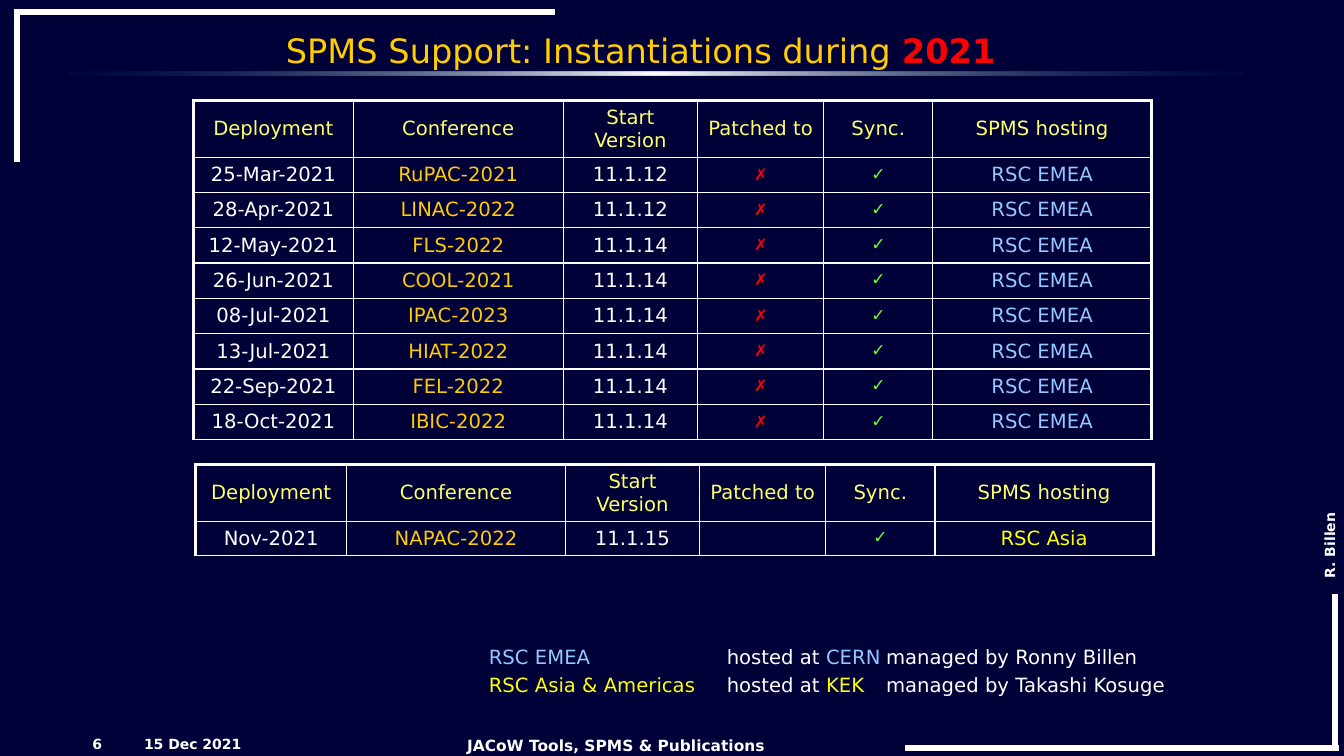
from lxml.etree import SubElement
from pptx import Presentation
from pptx.dml.color import RGBColor
from pptx.enum.shapes import MSO_CONNECTOR as Link, MSO_SHAPE as Shape
from pptx.enum.text import MSO_ANCHOR as Anchor, PP_ALIGN as Align
from pptx.oxml.ns import qn
from pptx.util import Inches, Pt

NAVY = RGBColor(0x00, 0x00, 0x39)
WHITE = RGBColor(0xFF, 0xFF, 0xFF)
GOLD = RGBColor(0xFF, 0xCC, 0x00)
LEMON = RGBColor(0xFF, 0xFF, 0x66)
YELLOW = RGBColor(0xFF, 0xFF, 0x00)
RED = RGBColor(0xFF, 0x00, 0x00)
GREEN = RGBColor(0x66, 0xFF, 0x33)
SKY = RGBColor(0x93, 0xC9, 0xFF)
STEEL = RGBColor(0x00, 0x33, 0x66)
SANS, MONO = "DejaVu Sans", "Courier New"

# Content
TITLE = [("SPMS Support: Instantiations during ", GOLD, False), ("2021", RED, True)]
HEAD = ("Deployment", "Conference", "Start Version", "Patched to", "Sync.", "SPMS hosting")
DONE = [
    ("25-Mar-2021", "RuPAC-2021", "11.1.12"),
    ("28-Apr-2021", "LINAC-2022", "11.1.12"),
    ("12-May-2021", "FLS-2022", "11.1.14"),
    ("26-Jun-2021", "COOL-2021", "11.1.14"),
    ("08-Jul-2021", "IPAC-2023", "11.1.14"),
    ("13-Jul-2021", "HIAT-2022", "11.1.14"),
    ("22-Sep-2021", "FEL-2022", "11.1.14"),
    ("18-Oct-2021", "IBIC-2022", "11.1.14"),
]
EMEA = [row + ("✗", "✓", "RSC EMEA") for row in DONE]
ASIA = [("Nov-2021", "NAPAC-2022", "11.1.15", "", "✓", "RSC Asia")]
HOSTS = [
    ("RSC EMEA", "CERN", "Ronny Billen", SKY),
    ("RSC Asia & Americas", "KEK", "Takashi Kosuge", YELLOW),
]

# Tables: left, top, column widths in twelfths of an inch, row height, rows, host colour
TABLES = [
    (1.92, 1, (19, 25, 16, 15, 13, 26), 0.35, EMEA, SKY),
    (1.94, 4.61, (18, 26, 16, 15, 13, 26), 0.34, ASIA, YELLOW),
]
TOP_ROW = 0.56
THIN, THICK = 1, 2.25

# Footer: text, box, size, alignment, rotation
NOTES = [
    ("R. Billen", (12.69, 5.2, 1, 0.27), 10, Align.LEFT, 270),
    ("15 Dec 2021", (1.33, 7.25, 1.78, 0.25), 10, Align.LEFT, 0),
    ("JACoW Tools, SPMS & Publications", (3.22, 7.25, 5.78, 0.25), 11, Align.CENTER, 0),
    ("6", (0.33, 7.25, 0.78, 0.25), 10, Align.RIGHT, 0),
]
# Corner frame lines: from x, y to x, y
FRAME = [
    (0.17, 0.09, 0.17, 1.61),
    (0.14, 0.12, 5.5, 0.12),
    (8.98, 7.42, 13.28, 7.42),
    (13.24, 5.89, 13.24, 7.41),
]


def inch(box):
    return [Inches(n) for n in box]


def add_run(para, text, size, color, bold=False, font=SANS):
    run = para.add_run()
    run.text = text
    run.font.name, run.font.size, run.font.bold = font, Pt(size), bold
    run.font.color.rgb = color


def add_box(slide, box):
    shape = slide.shapes.add_textbox(*inch(box))
    shape.text_frame.word_wrap = True
    return shape


def add_fill(parent, color, alpha=100):
    clr = SubElement(parent, qn("a:srgbClr"), val=str(color))
    if alpha < 100:
        SubElement(clr, qn("a:alpha"), val=str(alpha * 1000))


def add_rule(slide):
    bar = slide.shapes.add_shape(Shape.RECTANGLE, *inch((0.67, 0.71, 11.67, 0.04)))
    bar.shadow.inherit = False
    bar.line.fill.background()
    bar.fill.gradient()
    bar.fill.gradient_angle = 0
    stops = bar.fill._fill._gradFill.find(qn("a:gsLst"))
    for stop in list(stops):
        stops.remove(stop)
    for pos, color, alpha in ((0, STEEL, 10), (50, WHITE, 100), (100, STEEL, 10)):
        add_fill(SubElement(stops, qn("a:gs"), pos=str(pos * 1000)), color, alpha)


def add_frame(slide):
    for ends in FRAME:
        line = slide.shapes.add_connector(Link.STRAIGHT, *inch(ends))
        line.line.color.rgb, line.line.width = WHITE, Pt(4.5)
        SubElement(line._element.spPr, qn("a:effectLst"))


def set_edges(cell, left, right, top):
    props = cell._tc.get_or_add_tcPr()
    for side, width in (("L", left), ("R", right), ("T", top), ("B", THIN)):
        edge = SubElement(props, qn("a:ln" + side), w=str(Pt(width)))
        add_fill(SubElement(edge, qn("a:solidFill")), WHITE)


def add_grid(slide, left, top, cols, step, rows, host):
    data = [HEAD] + rows
    size = sum(cols) / 12, TOP_ROW + step * len(rows)
    grid = slide.shapes.add_table(len(data), len(cols), *inch((left, top) + size)).table
    grid.first_row = grid.horz_banding = False
    for col, width in zip(grid.columns, cols):
        col.width = Inches(width / 12)
    tints = (WHITE, GOLD, WHITE, RED, GREEN, host)
    for r, row in enumerate(data):
        grid.rows[r].height = Inches(step if r else TOP_ROW)
        for c, text in enumerate(row):
            cell = grid.cell(r, c)
            set_edges(cell, THIN if c else THICK,
                      THICK if c == len(cols) - 1 else THIN, THIN if r else THICK)
            cell.fill.background()
            cell.vertical_anchor = Anchor.MIDDLE
            para = cell.text_frame.paragraphs[0]
            para.alignment = Align.CENTER
            if text:
                add_run(para, text, 14, tints[c] if r else LEMON,
                        font=MONO if text in "✗✓" else SANS)
            else:
                SubElement(para._p, qn("a:endParaRPr"), sz="1400")


def add_hosts(slide):
    frame = add_box(slide, (4.75, 6.35, 6.98, 0.62)).text_frame
    for i, (name, site, boss, color) in enumerate(HOSTS):
        para = frame.add_paragraph() if i else frame.paragraphs[0]
        tabs = SubElement(para._p.get_or_add_pPr(), qn("a:tabLst"))
        for stop in (2.36, 3.94):
            SubElement(tabs, qn("a:tab"), pos=str(Inches(stop)), algn="l")
        if i:
            para.space_before = Pt(2.8)
        add_run(para, name, 14, color)
        add_run(para, "\thosted at ", 14, WHITE)
        add_run(para, site, 14, color)
        add_run(para, "\tmanaged by " + boss, 14, WHITE)


def main():
    deck = Presentation()
    deck.slide_width, deck.slide_height = inch((13.33, 7.5))
    slide = deck.slides.add_slide(deck.slide_layouts[5])
    slide.background.fill.solid()
    slide.background.fill.fore_color.rgb = NAVY

    # Rule and corner frame
    add_rule(slide)
    add_frame(slide)

    # Title
    title = slide.shapes.title
    title.left, title.top, title.width, title.height = inch((0.3, 0.25, 12.11, 0.5))
    title.text_frame.vertical_anchor = Anchor.MIDDLE
    para = title.text_frame.paragraphs[0]
    para.alignment = Align.CENTER
    for text, color, bold in TITLE:
        add_run(para, text, 24, color, bold)

    # Tables and hosting key
    for spec_row in TABLES:
        add_grid(slide, *spec_row)
    add_hosts(slide)

    # Footer and author
    for text, box, size, align, turn in NOTES:
        shape = add_box(slide, box)
        shape.rotation = turn
        para = shape.text_frame.paragraphs[0]
        para.alignment = align
        add_run(para, text, size, WHITE, True)

    deck.save("out.pptx")


if __name__ == "__main__":
    main()
